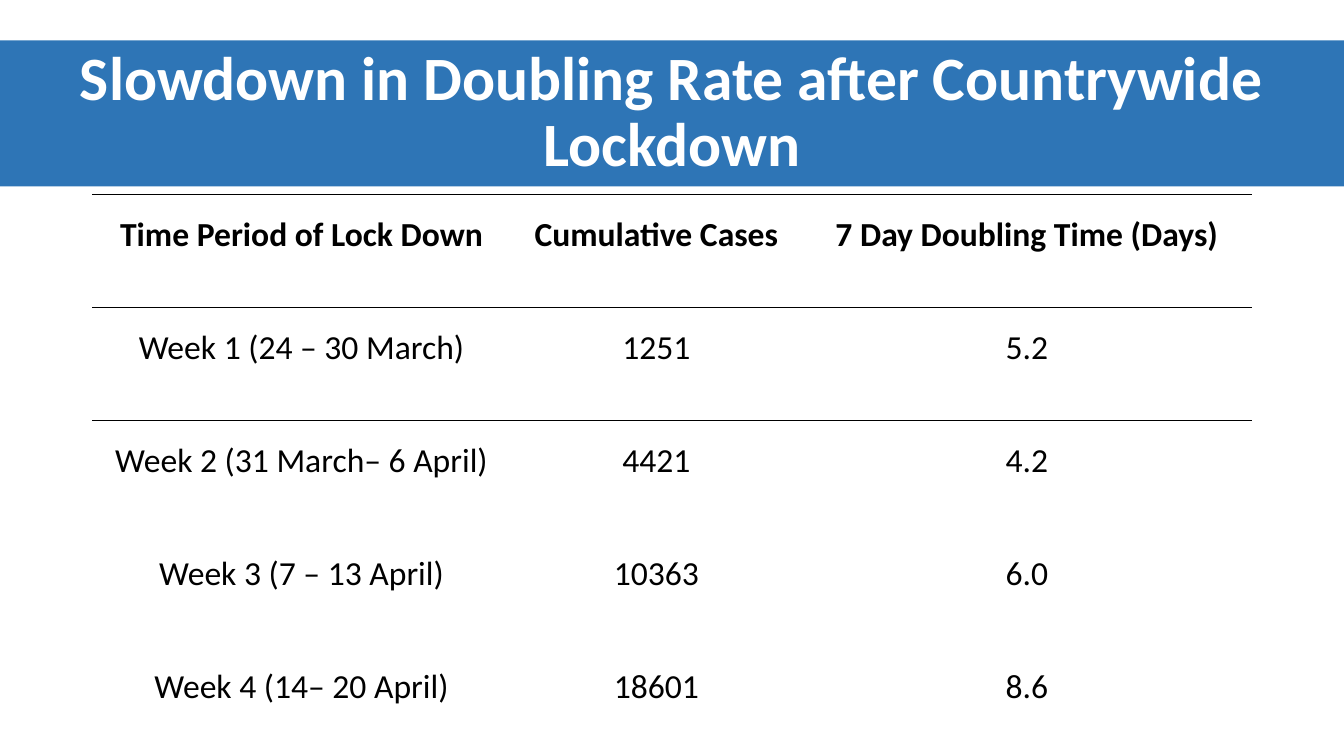
import pptx
import pptx.dml.color
import pptx.enum.shapes
import pptx.enum.text
import pptx.oxml
import pptx.oxml.ns
import pptx.util

Pt = pptx.util.Pt
FONT = "Calibri"
COLORS = {"banner": "2E75B6", "title": "FFFFFF", "text": "000000", "rule": "000000"}
COL_WIDTHS = [298.8, 208.1, 321.1]
ROW_HEIGHT = 80.7
RULED_ROWS = 2  # the header and the first week have rules above and below
ROWS = [
    ["Time Period of Lock Down", "Cumulative Cases", "7 Day Doubling Time (Days)"],
    ["Week 1 (24 – 30 March)", "1251", "5.2"],
    ["Week 2 (31 March– 6 April)", "4421", "4.2"],
    ["Week 3 (7 – 13 April)", "10363", "6.0"],
    ["Week 4 (14– 20 April)", "18601", "8.6"],
]


def rgb(name):
    return pptx.dml.color.RGBColor.from_string(COLORS[name])


def set_text(tf, text, size, color, bold, spacing):
    tf.text = text
    p = tf.paragraphs[0]
    p.alignment = pptx.enum.text.PP_ALIGN.CENTER
    p.line_spacing = spacing
    font = p.runs[0].font
    font.name, font.size, font.bold = FONT, Pt(size), bold
    font.color.rgb = rgb(color)


def add_banner(slide, text, left, top, width, height):
    sp = slide.shapes.add_shape(
        pptx.enum.shapes.MSO_SHAPE.RECTANGLE, Pt(left), Pt(top), Pt(width), Pt(height))
    sp.shadow.inherit = False
    sp.fill.solid()
    sp.fill.fore_color.rgb = rgb("banner")
    sp.line.fill.background()
    tf = sp.text_frame
    tf.word_wrap = True
    tf.vertical_anchor = pptx.enum.text.MSO_ANCHOR.MIDDLE
    set_text(tf, text, 44, "title", True, 0.9)


def set_borders(cell, ruled_sides):
    tc_pr = cell._tc.get_or_add_tcPr()
    ns = pptx.oxml.ns.nsdecls("a")
    for side in "LRTB":
        if side in ruled_sides:
            fill = f'<a:solidFill><a:srgbClr val="{COLORS["rule"]}"/></a:solidFill>'
        else:
            fill = "<a:noFill/>"
        tc_pr.append(pptx.oxml.parse_xml(
            f'<a:ln{side} {ns} w="{Pt(1)}">{fill}</a:ln{side}>'))


def add_case_table(slide, rows, left, top):
    frame = slide.shapes.add_table(
        len(rows), len(COL_WIDTHS), Pt(left), Pt(top),
        Pt(sum(COL_WIDTHS)), Pt(ROW_HEIGHT * len(rows)))
    table = frame.table
    table.first_row = table.horz_banding = False
    for column, width in zip(table.columns, COL_WIDTHS):
        column.width = Pt(width)
    for i, values in enumerate(rows):
        table.rows[i].height = Pt(ROW_HEIGHT)
        # A rule shared by two rows is set on both of them
        sides = ("T" if i <= RULED_ROWS else "") + ("B" if i < RULED_ROWS else "")
        for j, value in enumerate(values):
            cell = table.cell(i, j)
            cell.margin_left = cell.margin_right = Pt(5)
            cell.margin_top = cell.margin_bottom = Pt(0)
            set_borders(cell, sides)
            cell.fill.background()
            set_text(cell.text_frame, value, 24, "text", i == 0, 1.5)


def main():
    prs = pptx.Presentation()
    prs.slide_width, prs.slide_height = Pt(960), Pt(540)
    slide = prs.slides.add_slide(prs.slide_layouts[6])

    # Title banner
    add_banner(slide, "Slowdown in Doubling Rate after Countrywide Lockdown",
               0, 28.8, 960, 104.4)
    # Weekly cases and doubling times
    add_case_table(slide, ROWS, 66, 138.8)

    prs.save("out.pptx")


if __name__ == "__main__":
    main()
